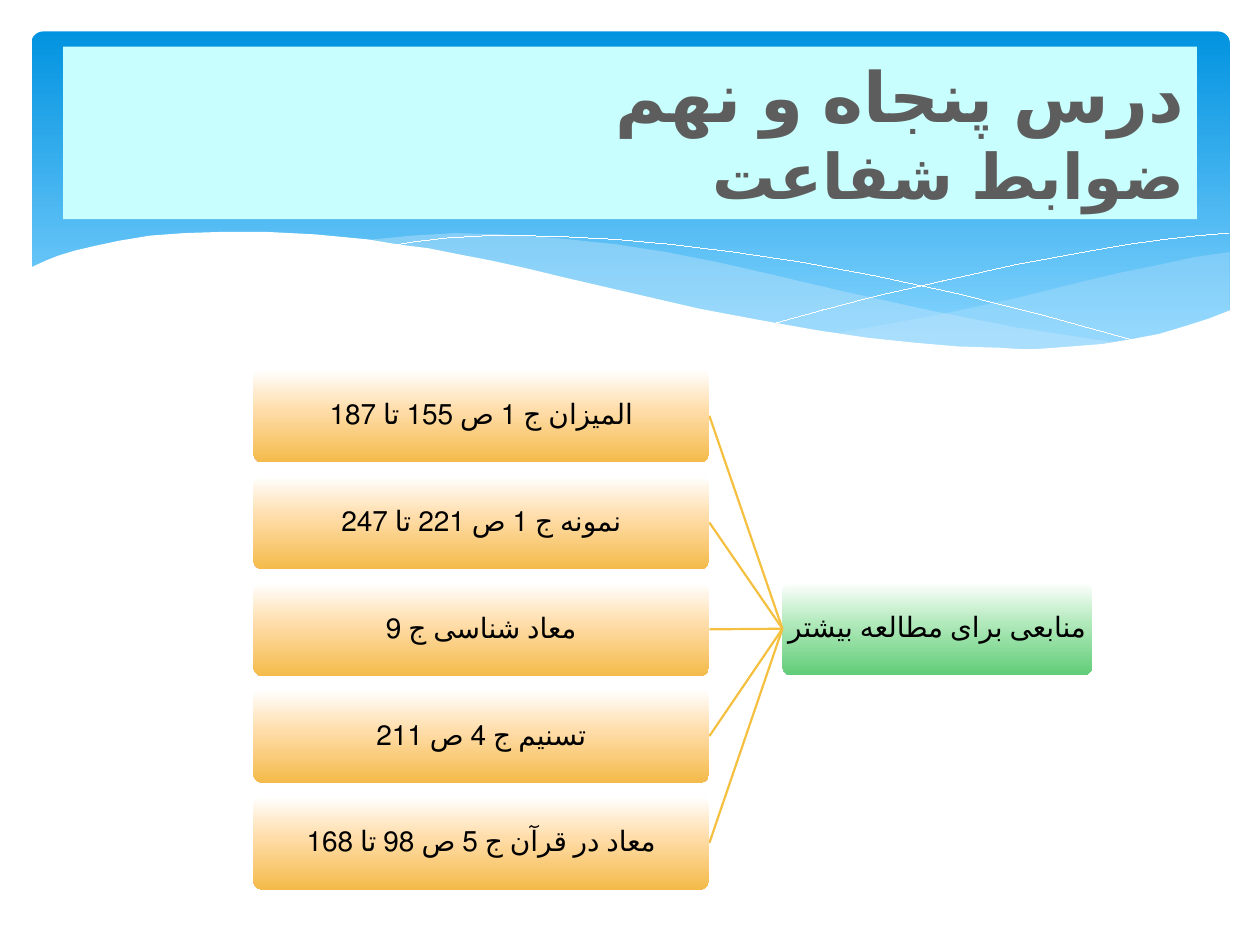
from dataclasses import dataclass
from lxml import etree
from pptx import Presentation
from pptx.dml.color import RGBColor
from pptx.enum.lang import MSO_LANGUAGE_ID
from pptx.enum.shapes import MSO_CONNECTOR, MSO_SHAPE
from pptx.enum.text import MSO_ANCHOR, MSO_AUTO_SIZE, PP_ALIGN
from pptx.oxml.ns import qn
from pptx.util import Inches, Pt

ROUND = MSO_SHAPE.ROUNDED_RECTANGLE
STRAIGHT = MSO_CONNECTOR.STRAIGHT
MIDDLE = MSO_ANCHOR.MIDDLE
CENTER, RIGHT = PP_ALIGN.CENTER, PP_ALIGN.RIGHT
FARSI = MSO_LANGUAGE_ID.FARSI
COLS, ROWS = 10, 7.5
UNIT = Inches(10) / COLS

Points = list[tuple[float, float]]
Stops = tuple[tuple[int, str], ...]


@dataclass(frozen=True)
class Theme:
    font: str = "Calibri"
    title_sizes: tuple[float, float] = (39.6, 36)
    card_size: float = 16
    title: str = "5D5D5D"
    title_fill: str = "C8FEFD"
    white: str = "FFFFFF"
    black: str = "000000"
    mist: str = "C6E7FC"
    link: str = "F5C040"
    sky: Stops = ((0, "0293E0"), (90, "83D3FE"))
    green: Stops = ((0, "FFFFFF"), (44, "B1E9BB"), (100, "61CD78"))
    amber: Stops = ((0, "FFFFFF"), (44, "FFDDAA"), (100, "F4BB4A"))


@dataclass(frozen=True)
class Box:
    left: float
    top: float
    width: float
    height: float

    def emu(self) -> list[int]:
        return [g(v) for v in (self.left, self.top, self.width, self.height)]

    @property
    def middle(self) -> float:
        return self.top + self.height / 2


@dataclass(frozen=True)
class Wave:
    points: Points
    fill: str | None = None
    alpha: int = 100


THEME = Theme()
TITLE = ("درس پنجاه و نهم", "ضوابط شفاعت")
ROOT = "منابعی برای مطالعه بیشتر"
SOURCES = (
    "المیزان ج 1 ص 155 تا 187",
    "نمونه ج 1 ص 221 تا 247",
    "معاد شناسی ج 9",
    "تسنیم ج 4 ص 211",
    "معاد در قرآن ج 5 ص 98 تا 168",
)
BANNER = Box(0.25, 0.25, 9.51, 2.7)
TITLE_BOX = Box(0.5, 0.37, 9, 1.37)
FIRST_CARD = Box(2.01, 2.93, 3.62, 0.74)
LAST_TOP = 6.32
CARD_STEP = (LAST_TOP - FIRST_CARD.top) / (len(SOURCES) - 1)
ROOT_BOX = Box(6.21, 4.62, 2.46, 0.74)

WAVES = (
    Wave([(9.76, 2), (9.48, 2.04), (9.21, 2.1), (8.91, 2.16), (8.61, 2.23),
          (8.05, 2.37), (7.53, 2.48), (7.06, 2.57), (6.61, 2.65), (6.91, 2.69),
          (7.19, 2.72), (7.45, 2.75), (7.81, 2.77), (8.14, 2.78), (8.54, 2.76),
          (8.81, 2.73), (9.05, 2.69), (9.28, 2.63), (9.49, 2.57), (9.76, 2.47)],
         THEME.mist, 29),
    Wave([(8.93, 2.73), (8.66, 2.69), (8.07, 2.6), (7.41, 2.47), (6.68, 2.31),
          (6.13, 2.18), (5.69, 2.08), (5.28, 2), (4.89, 1.94), (4.42, 1.89),
          (3.99, 1.86), (3.61, 1.85), (3.28, 1.87), (2.86, 1.91), (3.23, 1.96),
          (3.62, 2.03), (4.04, 2.11), (4.49, 2.22), (5.3, 2.4), (5.84, 2.52),
          (6.34, 2.61), (6.8, 2.68), (7.22, 2.74), (7.61, 2.77), (8.07, 2.78),
          (8.48, 2.77), (8.76, 2.75)],
         THEME.mist, 40),
    Wave([(3.09, 1.95), (3.28, 1.92), (3.53, 1.89), (3.87, 1.87), (4.16, 1.87),
          (4.5, 1.88), (4.89, 1.9), (5.33, 1.94), (5.82, 2), (6.36, 2.08),
          (6.95, 2.19), (7.6, 2.33), (8.31, 2.51), (9.07, 2.72)]),
    Wave([(6.13, 2.57), (6.53, 2.46), (6.95, 2.35), (7.48, 2.23), (8.06, 2.1),
          (8.66, 1.99), (8.95, 1.94), (9.24, 1.9), (9.51, 1.87), (9.75, 1.85)]),
    Wave([(9.77, 2.46), (9.59, 2.53), (9.4, 2.59), (9.2, 2.65), (8.99, 2.69),
          (8.75, 2.73), (8.5, 2.75), (8.37, 2.76), (8.23, 2.77), (8.09, 2.77),
          (7.93, 2.76), (7.61, 2.75), (7.26, 2.72), (6.88, 2.68), (6.48, 2.62),
          (6.03, 2.54), (5.55, 2.45), (5.03, 2.33), (4.47, 2.2), (4.18, 2.13),
          (3.91, 2.07), (3.65, 2.02), (3.4, 1.97), (3.16, 1.94), (2.92, 1.9),
          (2.5, 1.86), (2.11, 1.84), (1.77, 1.84), (1.46, 1.85), (1.19, 1.87),
          (0.95, 1.91), (0.76, 1.95), (0.59, 1.99), (0.46, 2.03), (0.36, 2.07),
          (0.23, 2.13), (0.23, 3.29), (9.77, 3.29)],
         THEME.white),
)


def g(n: float) -> int:
    return round(n * UNIT)


def rgb(value: str) -> RGBColor:
    return RGBColor.from_string(value)


def add_round(slide, box: Box, stops: Stops, corner: float):
    sp = slide.shapes.add_shape(ROUND, *box.emu())
    sp.adjustments[0] = corner
    sp.shadow.inherit = False
    sp.line.fill.background()
    sp.fill.gradient()
    sp.fill.gradient_angle = 270
    gs_list = sp._element.spPr.find(".//" + qn("a:gsLst"))
    gs_list.clear()
    for pos, color in stops:
        gs = etree.SubElement(gs_list, qn("a:gs"), pos=str(pos * 1000))
        etree.SubElement(gs, qn("a:srgbClr"), val=color)
    return sp


def add_wave(slide, wave: Wave) -> None:
    points = [(g(x), g(y)) for x, y in wave.points]
    builder = slide.shapes.build_freeform(*points[0])
    builder.add_line_segments(points[1:], close=wave.fill is not None)
    sp = builder.convert_to_shape()
    sp.shadow.inherit = False
    if wave.fill is None:
        sp.fill.background()
        sp.line.color.rgb = rgb(THEME.white)
        sp.line.width = Pt(0.01)
        return
    sp.line.fill.background()
    sp.fill.solid()
    sp.fill.fore_color.rgb = rgb(wave.fill)
    if wave.alpha < 100:
        color = sp._element.spPr.find(".//" + qn("a:srgbClr"))
        etree.SubElement(color, qn("a:alpha"), val=str(wave.alpha * 1000))


def format_text(p, align, sizes: tuple[float, ...], color: str, bold: bool) -> None:
    p.alignment = align
    p._p.get_or_add_pPr().set("rtl", "1")
    for r, size in zip(p.runs, sizes):
        r.font.name = THEME.font
        r.font.language_id = FARSI
        r.font.size = Pt(size)
        r.font.bold = bold
        r.font.color.rgb = rgb(color)


def add_title(slide) -> None:
    sp = slide.shapes.title
    sp.left, sp.top, sp.width, sp.height = TITLE_BOX.emu()
    sp.fill.solid()
    sp.fill.fore_color.rgb = rgb(THEME.title_fill)
    tf = sp.text_frame
    tf.text = "\v".join(TITLE)
    tf.auto_size = MSO_AUTO_SIZE.NONE
    tf.vertical_anchor = MIDDLE
    format_text(tf.paragraphs[0], RIGHT, THEME.title_sizes, THEME.title, True)
    slide.shapes._spTree.append(sp._element)


def add_card(slide, box: Box, text: str, stops: Stops) -> None:
    tf = add_round(slide, box, stops, 0.1).text_frame
    tf.text = text
    tf.word_wrap = True
    tf.vertical_anchor = MIDDLE
    tf.margin_left = tf.margin_right = tf.margin_top = tf.margin_bottom = g(0.01)
    p = tf.paragraphs[0]
    p.line_spacing = 0.9
    format_text(p, CENTER, (THEME.card_size,), THEME.black, False)


def add_link(slide, start: Box, end: Box) -> None:
    cx = slide.shapes.add_connector(
        STRAIGHT, g(start.left), g(start.middle), g(end.left + end.width), g(end.middle))
    cx.line.color.rgb = rgb(THEME.link)
    cx.line.width = Pt(1.25)
    etree.SubElement(cx._element.spPr, qn("a:effectLst"))


def main() -> None:
    prs = Presentation()
    prs.slide_width, prs.slide_height = g(COLS), g(ROWS)
    slide = prs.slides.add_slide(prs.slide_layouts[5])
    add_round(slide, BANNER, THEME.sky, 0.034)
    for wave in WAVES:
        add_wave(slide, wave)
    add_title(slide)
    add_card(slide, ROOT_BOX, ROOT, THEME.green)
    for i, text in enumerate(SOURCES):
        box = Box(FIRST_CARD.left, FIRST_CARD.top + i * CARD_STEP,
                  FIRST_CARD.width, FIRST_CARD.height)
        add_link(slide, ROOT_BOX, box)
        add_card(slide, box, text, THEME.amber)
    prs.save("out.pptx")


if __name__ == "__main__":
    main()
